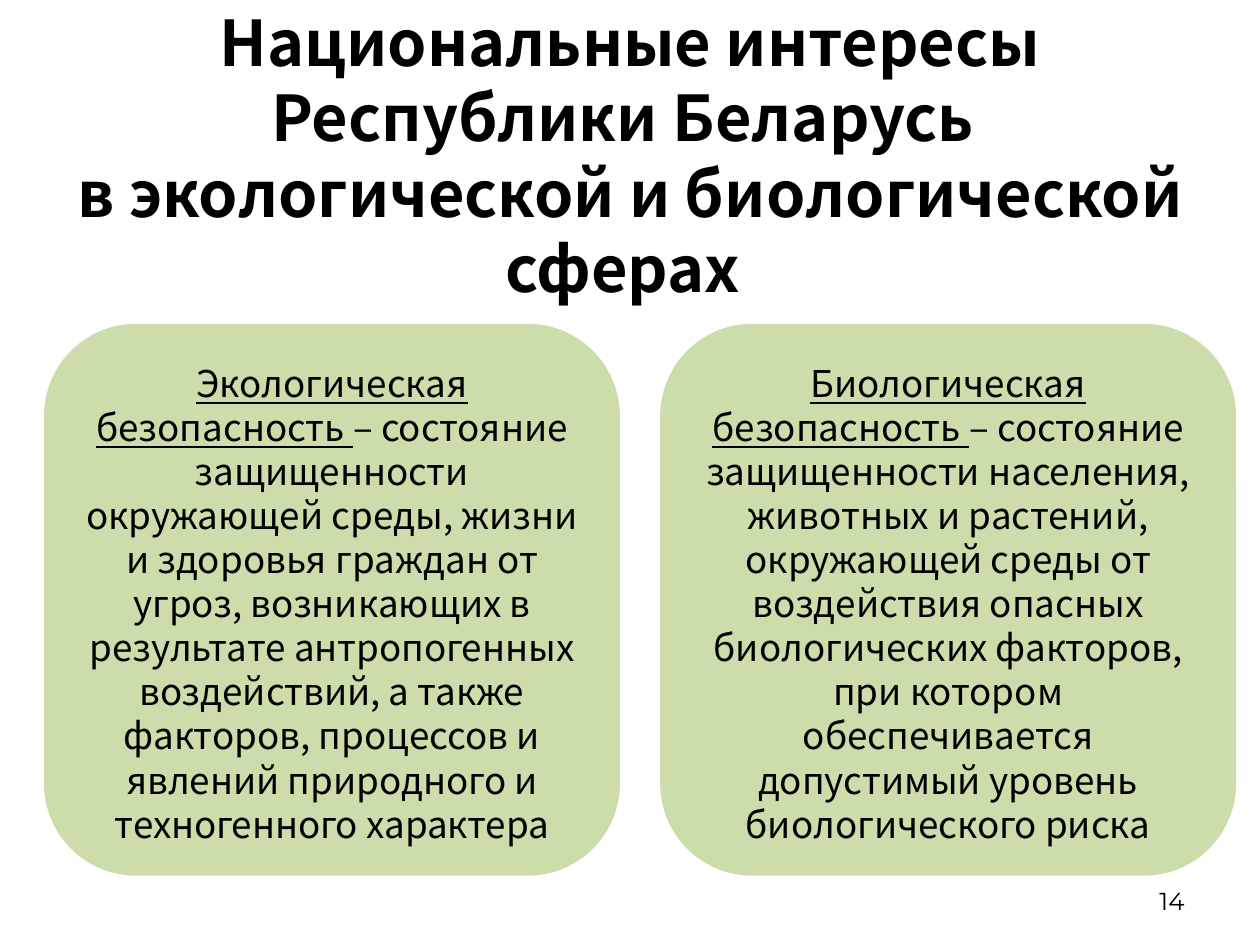
from lxml.etree import SubElement
from pptx import Presentation
from pptx.dml.color import RGBColor
from pptx.enum.shapes import MSO_SHAPE
from pptx.enum.text import MSO_ANCHOR, PP_ALIGN
from pptx.oxml.ns import qn
from pptx.util import Inches, Pt

BLACK = RGBColor(0x00, 0x00, 0x00)
GREEN = RGBColor(0x9B, 0xBB, 0x59)
SANS = "Noto Sans CJK JP"
TITLE = "Национальные интересы Республики Беларусь \vв экологической и биологической сферах "
CARDS = [
    ("Экологическая безопасность ",
     "– состояние защищенности окружающей среды, жизни и здоровья граждан "
     "от угроз, возникающих в результате антропогенных воздействий, а также "
     "факторов, процессов и явлений природного и техногенного характера"),
    ("Биологическая безопасность ",
     "– состояние защищенности населения, животных и растений, окружающей "
     "среды от воздействия опасных биологических факторов, при котором "
     "обеспечивается допустимый уровень биологического риска"),
]


def write(shape, parts, size, face=SANS, align=PP_ALIGN.CENTER, lead=None, drop=0):
    """Fill a shape with runs of one size and face, centred on its height."""
    frame = shape.text_frame
    frame.word_wrap = True
    frame.vertical_anchor = MSO_ANCHOR.MIDDLE
    frame.margin_top = Inches(0.05 + drop)
    para = frame.paragraphs[0]
    para.text = parts[0]
    for part in parts[1:]:
        para.add_run().text = part
    para.alignment = align
    if lead:
        para.line_spacing = Pt(lead)
    for run in para.runs:
        run.font.size = Pt(size)
        run.font.name = face
        run.font.color.rgb = BLACK
    return para.runs


def add_title(slide, box):
    """Place the bold heading in the box."""
    area = slide.shapes.add_textbox(*map(Inches, box))
    for run in write(area, [TITLE], 36, lead=43, drop=0.08):
        run.font.bold = True


def add_card(slide, box, term, sense):
    """Place one rounded card with an underlined term and its meaning."""
    card = slide.shapes.add_shape(MSO_SHAPE.ROUNDED_RECTANGLE, *map(Inches, box))
    card.shadow.inherit = False
    card.line.fill.background()
    card.fill.solid()
    card.fill.fore_color.rgb = GREEN
    tint = card.fill._xPr.find(".//" + qn("a:srgbClr"))
    SubElement(tint, qn("a:alpha"), val="50000")
    runs = write(card, [term, sense], 21, lead=25.2, drop=0.05)
    runs[0].font.underline = True


def add_cards(slide, box, gap):
    """Share the box out among the cards in equal columns."""
    left, top, width, height = box
    wide = (width - gap * (len(CARDS) - 1)) / len(CARDS)
    for col, (term, sense) in enumerate(CARDS):
        add_card(slide, (left + col * (wide + gap), top, wide, height), term, sense)


def add_number(slide, box):
    """Place the page number at the right of the box."""
    area = slide.shapes.add_textbox(*map(Inches, box))
    write(area, ["14"], 14, "Montserrat", PP_ALIGN.RIGHT)


def main():
    """Build the slide and save it."""
    deck = Presentation()
    deck.slide_width, deck.slide_height = Inches(10), Inches(7.5)
    slide = deck.slides.add_slide(deck.slide_layouts[6])
    add_number(slide, (7.17, 6.95, 2.33, 0.4))
    add_title(slide, (0.5, 0.36, 9, 1.65))
    add_cards(slide, (0.35, 2.57, 9.46, 4.38), 0.32)
    deck.save("out.pptx")


if __name__ == "__main__":
    main()
